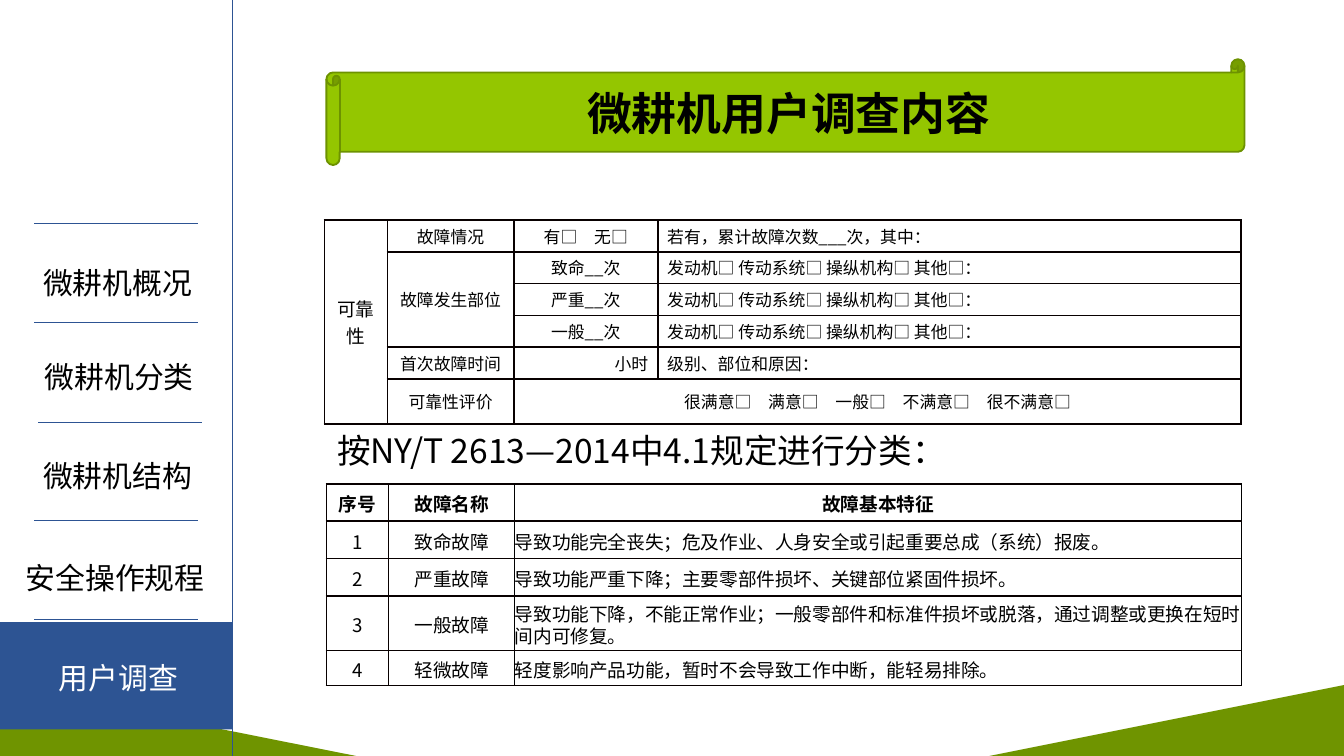
"""Build the tiller user survey slide: side menu, title scroll and two tables."""
from dataclasses import dataclass

import pptx
import pptx.dml.color
import pptx.enum.shapes
import pptx.enum.text
import pptx.oxml
import pptx.oxml.ns
import pptx.util
from lxml import etree

Cm, Pt = pptx.util.Cm, pptx.util.Pt
SHAPE = pptx.enum.shapes.MSO_SHAPE
ALIGN = pptx.enum.text.PP_ALIGN
MIDDLE = pptx.enum.text.MSO_ANCHOR.MIDDLE
qn = pptx.oxml.ns.qn

FONT = "Noto Sans CJK SC"
BLUE, GREEN, LIME, OLIVE = "2D5493", "6F9400", "94C600", "6D9200"
BLACK, WHITE, BORDER = "000000", "FFFFFF", "080000"


@dataclass
class Box:
    x: float
    y: float
    w: float
    h: float


@dataclass
class Label:
    text: str
    box: Box
    color: str = BLACK
    size: float = 16
    align: ALIGN = ALIGN.CENTER
    wrap: bool = True


@dataclass
class Line:
    x1: float
    y1: float
    x2: float
    y2: float


@dataclass
class Cell:
    row: int
    col: int
    text: str
    align: ALIGN = ALIGN.CENTER
    size: float = 9
    bold: bool = False
    rows: int = 1
    cols: int = 1


@dataclass
class Grid:
    x: float
    y: float
    cols: list[float]
    rows: list[float]
    margins: tuple[float, float, float, float]
    cells: list[Cell]
    spacing: float | None = None
    thin_after: int | None = None


def rgb(color: str) -> pptx.dml.color.RGBColor:
    return pptx.dml.color.RGBColor.from_string(color)


def place(box: Box) -> tuple:
    return Cm(box.x), Cm(box.y), Cm(box.w), Cm(box.h)


def write(tf, text: str, size: float, color: str, align: ALIGN, bold: bool = False) -> None:
    p = tf.paragraphs[0]
    p.alignment = align
    r = p.add_run()
    r.text = text
    r.font.size, r.font.bold = Pt(size), bold
    r.font.color.rgb = rgb(color)
    r.font.name = FONT
    etree.SubElement(r.font._element, qn("a:ea")).set("typeface", FONT)


def add_shape(s, kind: SHAPE, box: Box, fill: str, line: str | None = None):
    sp = s.shapes.add_shape(kind, *place(box))
    sp.shadow.inherit = False
    sp.fill.solid()
    sp.fill.fore_color.rgb = rgb(fill)
    if line:
        sp.line.color.rgb = rgb(line)
        sp.line.width = Pt(1)
    else:
        sp.line.fill.background()
    return sp


def add_line(s, line: Line) -> None:
    cx = s.shapes.add_connector(pptx.enum.shapes.MSO_CONNECTOR.STRAIGHT,
                                Cm(line.x1), Cm(line.y1), Cm(line.x2), Cm(line.y2))
    cx.line.color.rgb = rgb(BLUE)
    cx.line.width = Pt(0.5)
    etree.SubElement(cx._element.spPr, qn("a:effectLst"))


def add_label(s, label: Label) -> None:
    tf = s.shapes.add_textbox(*place(label.box)).text_frame
    tf.word_wrap = label.wrap
    tf.auto_size = pptx.enum.text.MSO_AUTO_SIZE.SHAPE_TO_FIT_TEXT
    write(tf, label.text, label.size, label.color, label.align)


def add_borders(cell, thin: str) -> None:
    tc_pr = cell._tc.get_or_add_tcPr()
    for i, side in enumerate("LRTB"):
        width, color = (0.75, BLACK) if side in thin else (1, BORDER)
        tc_pr.insert(i, pptx.oxml.parse_xml(
            f'<a:ln{side} xmlns:a="http://schemas.openxmlformats.org/drawingml/2006/main" '
            f'w="{Pt(width)}"><a:solidFill><a:srgbClr val="{color}"/></a:solidFill></a:ln{side}>'))


def add_grid(s, grid: Grid) -> None:
    box = Box(grid.x, grid.y, sum(grid.cols), sum(grid.rows))
    table = s.shapes.add_table(len(grid.rows), len(grid.cols), *place(box)).table
    table.first_row = table.horz_banding = False
    for column, width in zip(table.columns, grid.cols):
        column.width = Cm(width)
    for row, height in zip(table.rows, grid.rows):
        row.height = Cm(height)
        for col, cell in enumerate(row.cells):
            cell.fill.background()
            thin = ""
            if grid.thin_after is not None and col >= grid.thin_after:
                thin = "R" if col == grid.thin_after else "LR"
            add_borders(cell, thin)
            cell.vertical_anchor = MIDDLE
            (cell.margin_left, cell.margin_top,
             cell.margin_right, cell.margin_bottom) = map(Cm, grid.margins)
    for c in grid.cells:
        cell = table.cell(c.row, c.col)
        if c.rows > 1 or c.cols > 1:
            cell.merge(table.cell(c.row + c.rows - 1, c.col + c.cols - 1))
        write(cell.text_frame, c.text, c.size, BLACK, c.align, c.bold)
        if grid.spacing:
            cell.text_frame.paragraphs[0].line_spacing = Pt(grid.spacing)


def survey_cells() -> list[Cell]:
    cells = [
        Cell(0, 0, "可靠性", size=10, rows=6),
        Cell(0, 1, "故障情况"),
        Cell(0, 2, "有□　无□"),
        Cell(0, 3, "若有，累计故障次数___次，其中：", ALIGN.LEFT),
        Cell(1, 1, "故障发生部位", rows=3),
        Cell(4, 1, "首次故障时间"),
        Cell(4, 2, "小时", ALIGN.RIGHT),
        Cell(4, 3, "级别、部位和原因：", ALIGN.LEFT),
        Cell(5, 1, "可靠性评价"),
        Cell(5, 2, "很满意□　满意□　一般□　不满意□　很不满意□", cols=2),
    ]
    for row, level in enumerate(("致命", "严重", "一般"), 1):
        cells += [Cell(row, 2, f"{level}__次"),
                  Cell(row, 3, "发动机□ 传动系统□ 操纵机构□ 其他□：", ALIGN.LEFT)]
    return cells


def fault_cells() -> list[Cell]:
    faults = [
        ("致命故障", "导致功能完全丧失；危及作业、人身安全或引起重要总成（系统）报废。"),
        ("严重故障", "导致功能严重下降；主要零部件损坏、关键部位紧固件损坏。"),
        ("一般故障", "导致功能下降，不能正常作业；一般零部件和标准件损坏或脱落，"
                 "通过调整或更换在短时间内可修复。"),
        ("轻微故障", "轻度影响产品功能，暂时不会导致工作中断，能轻易排除。"),
    ]
    cells = [Cell(0, col, text, size=10, bold=True)
             for col, text in enumerate(("序号", "故障名称", "故障基本特征"))]
    for row, (name, feature) in enumerate(faults, 1):
        cells += [Cell(row, 0, str(row), size=10), Cell(row, 1, name, size=10),
                  Cell(row, 2, feature, ALIGN.LEFT, 10)]
    return cells


def main() -> None:
    prs = pptx.Presentation()
    prs.slide_width, prs.slide_height = Cm(25.4), Cm(14.29)
    s = prs.slides.add_slide(prs.slide_layouts[6])

    add_shape(s, SHAPE.RIGHT_TRIANGLE, Box(0, 12.95, 6.73, 1.34), GREEN)
    sp = add_shape(s, SHAPE.RIGHT_TRIANGLE, Box(18.7, 12.95, 6.7, 1.34), GREEN)
    sp._element.spPr.find(qn("a:xfrm")).set("flipH", "1")
    add_shape(s, SHAPE.RECTANGLE, Box(0, 11.76, 4.39, 2.03), BLUE)

    add_line(s, Line(4.39, 0, 4.39, 14.29))
    for x, y in ((0.65, 4.22), (0.65, 6.1), (0.72, 7.99), (0.65, 9.84), (0.65, 11.7)):
        add_line(s, Line(x, y, x + 3.1, y))
    for label in (
        Label("微耕机概况", Box(0.5, 4.88, 3.45, 0.94)),
        Label("微耕机分类", Box(0.53, 6.65, 3.45, 0.94)),
        Label("微耕机结构", Box(0.5, 8.53, 3.45, 0.94)),
        Label("安全操作规程", Box(0.2, 10.46, 3.96, 0.94)),
        Label("用户调查", Box(0.69, 12.34, 3.1, 0.94), WHITE),
        Label("按NY/T 2613—2014中4.1规定进行分类：", Box(6.12, 8, 12.12, 1.02),
              size=18, align=ALIGN.LEFT, wrap=False),
    ):
        add_label(s, label)

    sp = add_shape(s, SHAPE.HORIZONTAL_SCROLL, Box(6.17, 1.12, 17.35, 2), LIME, OLIVE)
    sp.text_frame.vertical_anchor = MIDDLE
    write(sp.text_frame, "微耕机用户调查内容", 24, BLACK, ALIGN.CENTER, True)

    add_grid(s, Grid(6.13, 4.16, [1.19, 2.39, 2.72, 11.02], [0.6] * 5 + [0.85],
                     (0.18, 0, 0.18, 0), survey_cells()))
    add_grid(s, Grid(6.17, 9.15, [1.17, 2.39, 13.73], [0.7, 0.71, 0.71, 1.03, 0.66],
                     (0, 0.13, 0, 0), fault_cells(), spacing=12, thin_after=1))
    prs.save("out.pptx")


if __name__ == "__main__":
    main()
